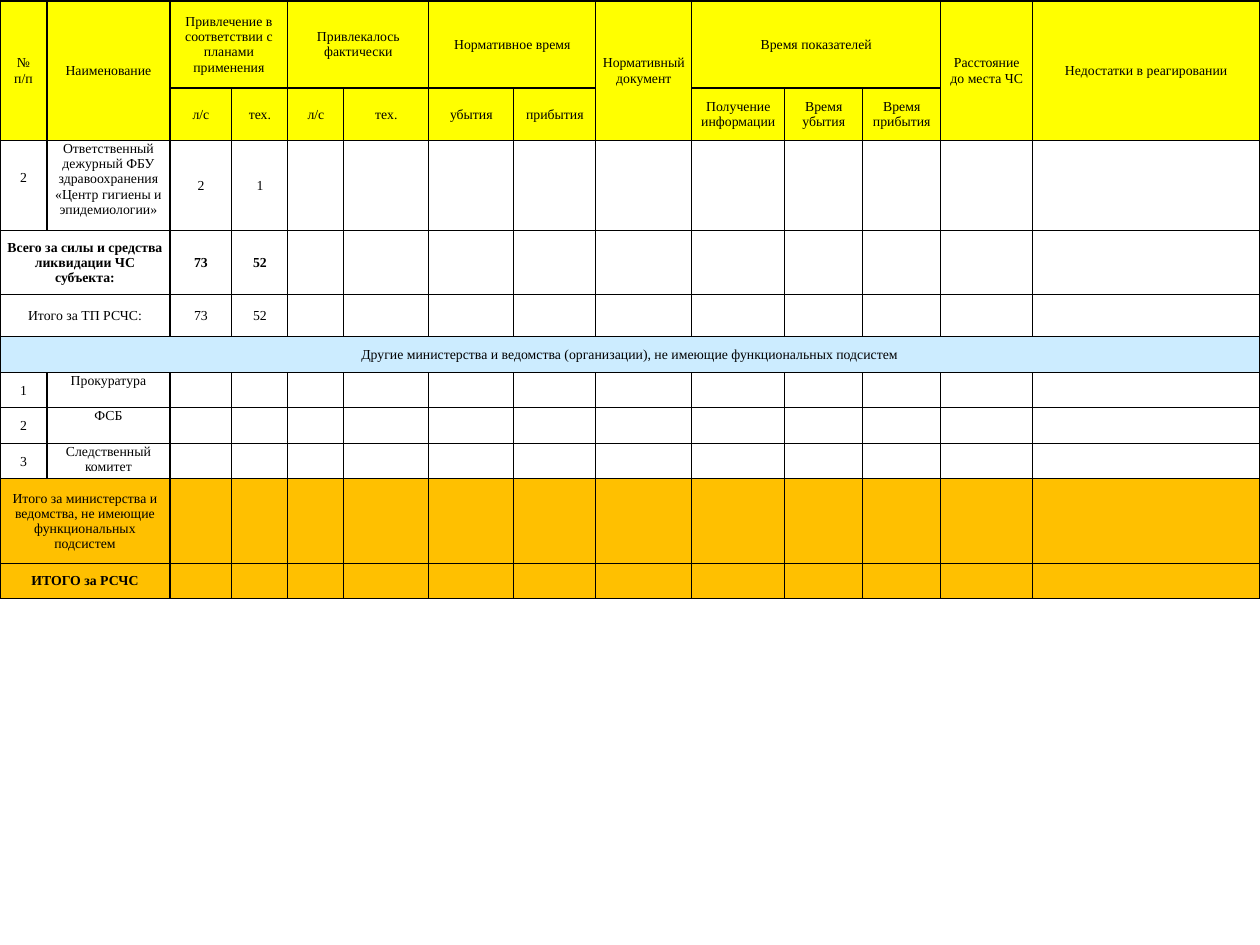
from pptx import Presentation
from pptx import util as u
from pptx.dml.color import RGBColor
from pptx.enum import text
from pptx.oxml import parse_xml
from pptx.oxml.ns import nsdecls

SCALE = 914400 // 90
BLACK = RGBColor(0, 0, 0)
WHITE = RGBColor(255, 255, 255)
YELLOW = RGBColor(255, 255, 0)
BLUE = RGBColor(204, 236, 255)
ORANGE = RGBColor(255, 192, 0)

COLS = [47, 123, 62, 56, 56, 85, 85, 82, 96, 93, 78, 78, 92, 227]
ROWS = [(87, YELLOW), (53, YELLOW), (90, WHITE), (64, WHITE), (42, WHITE),
        (36, BLUE), (35, WHITE), (36, WHITE), (35, WHITE), (85, ORANGE),
        (35, ORANGE)]
SPANS = [(0, col, 2, 1) for col in (0, 1, 8, 12, 13)]
SPANS += [(0, col, 1, 2) for col in (2, 4, 6)] + [(0, 9, 1, 3)]
SPANS += [(row, 0, 1, 2) for row in (3, 4, 9, 10)] + [(5, 0, 1, 14)]
WORDS = [
    {0: "№ п/п", 1: "Наименование",
     2: "Привлечение в соответствии с планами применения",
     4: "Привлекалось фактически", 6: "Нормативное время",
     8: "Нормативный документ", 9: "Время показателей",
     12: "Расстояние до места ЧС", 13: "Недостатки в реагировании"},
    {2: "л/с", 3: "тех.", 4: "л/с", 5: "тех.", 6: "убытия", 7: "прибытия",
     9: "Получение информации", 10: "Время убытия", 11: "Время прибытия"},
    {0: "2", 1: "Ответственный дежурный ФБУ здравоохранения "
                "«Центр гигиены и эпидемиологии»", 2: "2", 3: "1"},
    {0: "Всего за силы и средства ликвидации ЧС субъекта:", 2: "73", 3: "52"},
    {0: "Итого за ТП РСЧС:", 2: "73", 3: "52"},
    {0: "Другие министерства и ведомства (организации), "
        "не имеющие функциональных подсистем"},
    {0: "1", 1: "Прокуратура"},
    {0: "2", 1: "ФСБ"},
    {0: "3", 1: "Следственный комитет"},
    {0: "Итого за министерства и ведомства, "
        "не имеющие функциональных подсистем"},
    {0: "ИТОГО за РСЧС"},
]
BOLD = (3, 10)
NAMES = [(row, 1) for row in (2, 6, 7, 8)]


def px(size):
    return u.Emu(size * SCALE)


class Sheet:
    def __init__(self, slide, font="Times New Roman", size=11):
        self.slide = slide
        self.font = font
        self.size = u.Pt(size)

    def table(self, left, top, cols, rows, spans):
        high = [size for size, _ in rows]
        grid = self.slide.shapes.add_table(
            len(rows), len(cols), px(left), px(top),
            px(sum(cols)), px(sum(high))).table
        grid.first_row = grid.horz_banding = False
        for col, size in zip(grid.columns, cols):
            col.width = px(size)
        for row, (size, fill) in zip(grid.rows, rows):
            row.height = px(size)
            for cell in row.cells:
                self.cell(cell, fill)
        for row, col, down, wide in spans:
            grid.cell(row, col).merge(grid.cell(row + down - 1, col + wide - 1))
        return grid

    def cell(self, cell, fill):
        cell.margin_left = cell.margin_right = px(6)
        cell.margin_top = cell.margin_bottom = 0
        cell.vertical_anchor = text.MSO_ANCHOR.MIDDLE
        props = cell._tc.get_or_add_tcPr()
        for side in "LRTB":
            props.append(parse_xml(
                f'<a:ln{side} {nsdecls("a")} w="{u.Pt(1)}"><a:solidFill>'
                f'<a:srgbClr val="{BLACK}"/></a:solidFill></a:ln{side}>'))
        cell.fill.solid()
        cell.fill.fore_color.rgb = fill

    def label(self, cell, words, bold=False):
        cell.text = words
        para = cell.text_frame.paragraphs[0]
        para.alignment = text.PP_ALIGN.CENTER
        para.font.name = self.font
        para.font.size = self.size
        para.font.bold = bold
        para.font.color.rgb = BLACK


def main():
    deck = Presentation()
    deck.slide_width, deck.slide_height = px(1260), px(945)
    sheet = Sheet(deck.slides.add_slide(deck.slide_layouts[6]))
    grid = sheet.table(0, 1, COLS, ROWS, SPANS)
    for row, line in enumerate(WORDS):
        for col, words in line.items():
            sheet.label(grid.cell(row, col), words, row in BOLD)
    for row, col in NAMES:
        grid.cell(row, col).vertical_anchor = text.MSO_ANCHOR.TOP
    grid.cell(2, 0).margin_bottom = px(16)
    deck.save("out.pptx")


if __name__ == "__main__":
    main()
